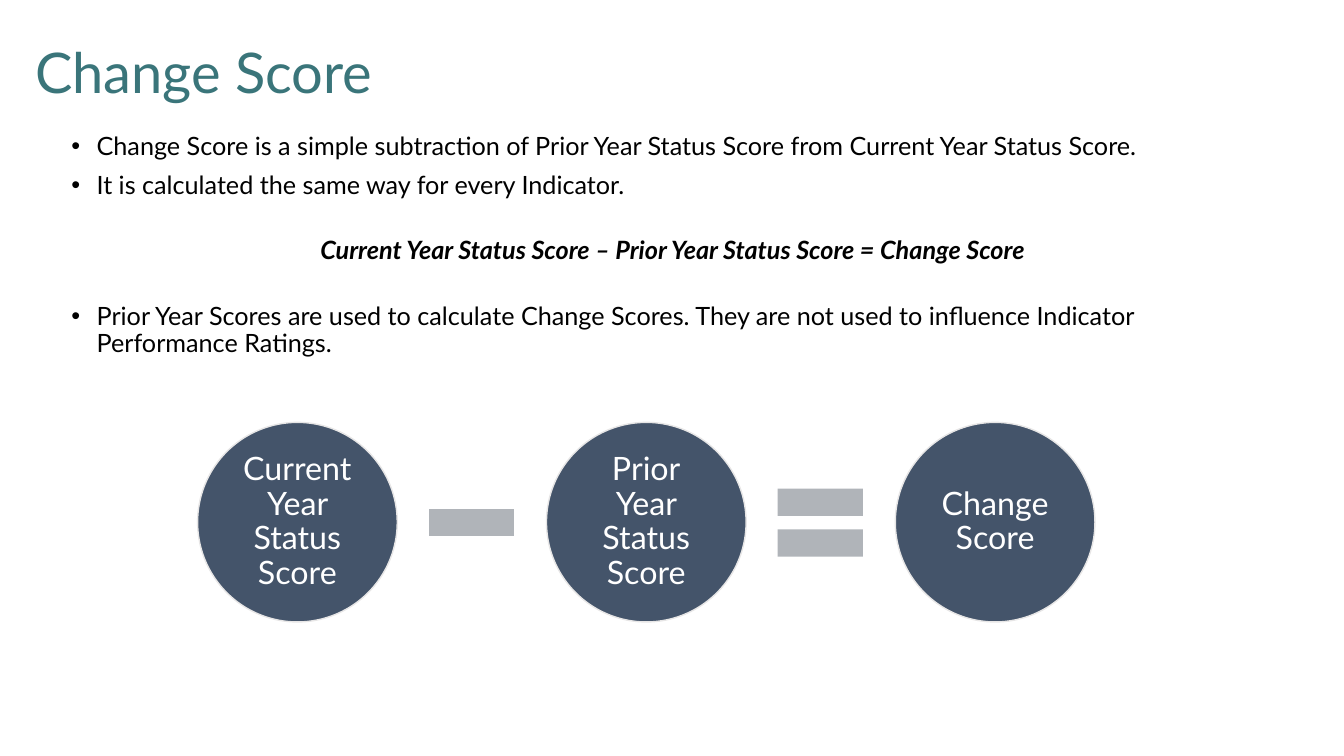
from lxml.etree import SubElement
from pptx import Presentation
from pptx.dml.color import RGBColor
from pptx.enum.shapes import MSO_SHAPE
from pptx.enum.text import MSO_ANCHOR, PP_ALIGN
from pptx.oxml.ns import qn
from pptx.util import Pt

PX = 9144
HUES = {"teal": "3A757A", "ink": "000000", "navy": "44546A",
        "rim": "E7E6E6", "grey": "B0B4B9", "white": "FFFFFF"}


def hue(name):
    return RGBColor.from_string(HUES[name])


def emu(*box):
    return [n * PX for n in box]


def write(para, text, size, color, bold=False, align=PP_ALIGN.LEFT):
    para.alignment = align
    para.line_spacing = 0.9
    for i, line in enumerate(text.split("\n")):
        if i:
            para.add_line_break()
        run = para.add_run()
        run.text = line
        font = run.font
        font.name, font.size = "Lato", Pt(size)
        font.bold = font.italic = bold
        font.color.rgb = hue(color)


def indent(para, left, hang=0):
    props = para._p.get_or_add_pPr()
    props.set("marL", str(left * PX))
    props.set("indent", str(-hang * PX))
    return props


def add_title(slide, box):
    frame = slide.shapes.add_textbox(*emu(*box)).text_frame
    frame.word_wrap = True
    frame.vertical_anchor = MSO_ANCHOR.BOTTOM
    para = frame.paragraphs[0]
    indent(para, 25)
    write(para, "Change Score", 40, "teal")


def add_body(slide, box):
    lines = [
        ("Change Score is a simple subtraction of Prior Year Status Score from Current Year Status Score.", 0, True),
        ("It is calculated the same way for every Indicator.", 8, True),
        ("Current Year Status Score – Prior Year Status Score = Change Score", 27, False),
        ("Prior Year Scores are used to calculate Change Scores. They are not used to influence Indicator Performance Ratings.", 28, True),
    ]
    frame = slide.shapes.add_textbox(*emu(*box)).text_frame
    frame.word_wrap = True
    for i, (text, before, dot) in enumerate(lines):
        para = frame.add_paragraph() if i else frame.paragraphs[0]
        if dot:
            props = indent(para, 25, 25)
            SubElement(props, qn("a:buFont")).set("typeface", "Arial")
            SubElement(props, qn("a:buChar")).set("char", "•")
        para.space_before = Pt(before)
        write(para, text, 18, "ink", not dot, PP_ALIGN.LEFT if dot else PP_ALIGN.CENTER)


def add_form(slide, kind, box, color):
    form = slide.shapes.add_shape(kind, *emu(*box))
    form.shadow.inherit = False
    form.fill.solid()
    form.fill.fore_color.rgb = hue(color)
    form.line.fill.background()
    return form


def add_circle(slide, box, text):
    disc = add_form(slide, MSO_SHAPE.OVAL, box, "navy")
    disc.line.color.rgb = hue("rim")
    disc.line.width = Pt(1)
    frame = disc.text_frame
    frame.word_wrap = True
    frame.vertical_anchor = MSO_ANCHOR.MIDDLE
    frame.margin_left = frame.margin_right = 3 * PX
    frame.margin_top = frame.margin_bottom = 3 * PX
    write(frame.paragraphs[0], text, 23, "white", align=PP_ALIGN.CENTER)


def add_formula(slide, box):
    left, top, width, disc = box
    sign = 115
    terms = ["Current Year Status Score", "Prior\nYear Status Score", "Change Score"]
    signs = [MSO_SHAPE.MATH_MINUS, MSO_SHAPE.MATH_EQUAL]
    step = (width - disc) // len(signs)
    for i, text in enumerate(terms):
        add_circle(slide, (left + i * step, top, disc, disc), text)
    for i, kind in enumerate(signs):
        x = left + i * step + disc + (step - disc - sign) // 2
        add_form(slide, kind, (x, top + (disc - sign) // 2 + 1, sign, sign), "grey")


def main():
    deck = Presentation()
    deck.slide_width, deck.slide_height = emu(1333, 750)
    slide = deck.slides.add_slide(deck.slide_layouts[6])
    add_title(slide, (0, 0, 1155, 110))
    add_body(slide, (61, 128, 1212, 77))
    add_formula(slide, (196, 419, 890, 198))
    deck.save("out.pptx")


if __name__ == "__main__":
    main()
